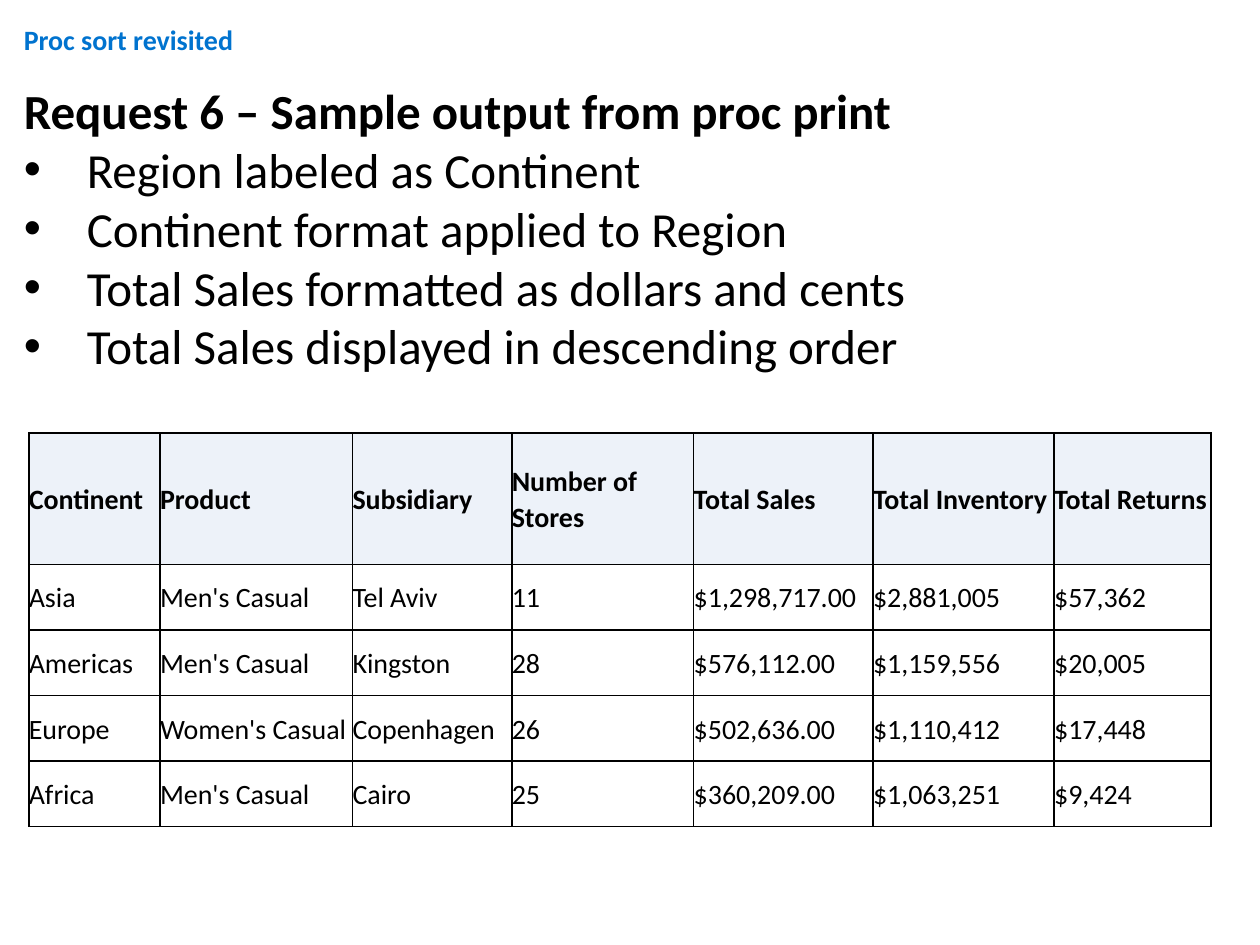
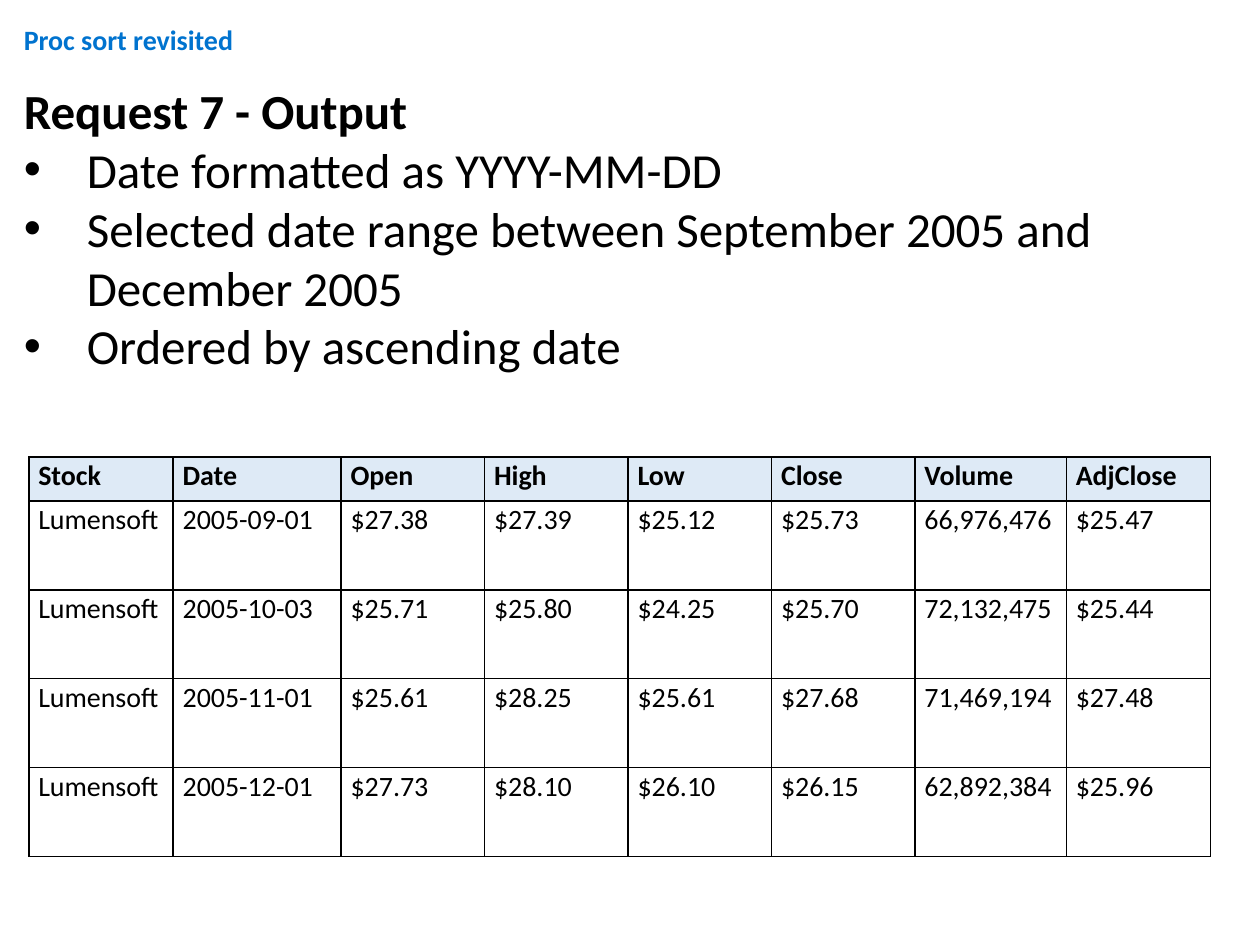
from pptx import Presentation
from pptx.dml.color import RGBColor
from pptx.enum import text as t
from pptx.oxml import parse_xml
from pptx.oxml.ns import nsdecls
from pptx.util import Pt


def rgb(code):
    return RGBColor.from_string(code)


class Deck:
    font = "Calibri"
    blue, black = "0073CF", "000000"
    left, wide = 6.5, 685

    def __init__(self):
        self.prs = Presentation()
        self.prs.slide_width, self.prs.slide_height = Pt(720), Pt(540)

    def page(self, head, points):
        """Start a slide with its section title, heading and bullets."""
        self.slide = self.prs.slides.add_slide(self.prs.slide_layouts[6])
        title = self.box(9.5, 26.5)
        self.label(title.paragraphs[0], "Proc sort revisited", 16, True, self.blue)
        body = self.box(42.5, 177)
        self.label(body.paragraphs[0], head, 28, True)
        for point in points:
            para = body.add_paragraph()
            self.label(para, point, 28)
            self.bullet(para)

    def box(self, top, high):
        shape = self.slide.shapes.add_textbox(
            Pt(self.left), Pt(top), Pt(self.wide), Pt(high))
        frame = shape.text_frame
        frame.word_wrap = True
        frame.auto_size = t.MSO_AUTO_SIZE.SHAPE_TO_FIT_TEXT
        return frame

    def label(self, para, words, size, bold=False, color=black):
        para.text = words
        font = para.font
        font.name, font.size, font.bold = self.font, Pt(size), bold
        font.color.rgb = rgb(color)

    def bullet(self, para):
        props = para._p.get_or_add_pPr()
        props.set("marL", str(Pt(36)))
        props.set("indent", str(-Pt(36)))
        marks = (f'<a:buFont {nsdecls("a")} typeface="Arial"/>',
                 f'<a:buChar {nsdecls("a")} char="•"/>')
        for place, mark in enumerate(marks):
            props.insert(place, parse_xml(mark))

    def border(self, cell):
        props = cell._tc.get_or_add_tcPr()
        for side in "LRTB":
            props.append(parse_xml(
                f'<a:ln{side} {nsdecls("a")} w="{Pt(1)}"><a:solidFill>'
                f'<a:srgbClr val="{self.black}"/></a:solidFill></a:ln{side}>'))

    def table(self, top, cols, highs, rows, tint, inset=0, after=0,
              anchor=t.MSO_ANCHOR.TOP):
        """Draw a bordered grid; highs holds the head and body row heights."""
        tall = [highs[0]] + [highs[1]] * (len(rows) - 1)
        grid = self.slide.shapes.add_table(
            len(rows), len(cols), Pt(16.5), Pt(top),
            Pt(sum(cols)), Pt(sum(tall))).table
        grid.first_row = grid.horz_banding = False
        for col, width in zip(grid.columns, cols):
            col.width = Pt(width)
        for i, (row, values) in enumerate(zip(grid.rows, rows)):
            row.height = Pt(tall[i])
            for cell, value in zip(row.cells, values):
                cell.margin_left = cell.margin_right = Pt(inset)
                cell.margin_top = cell.margin_bottom = 0
                cell.vertical_anchor = anchor
                para = cell.text_frame.paragraphs[0]
                self.label(para, value, 16, bold=i == 0)
                para.line_spacing, para.space_after = 1.07, Pt(after)
                self.border(cell)
                if i == 0:
                    cell.fill.solid()
                    cell.fill.fore_color.rgb = rgb(tint)
                else:
                    cell.fill.background()


def main():
    deck = Deck()

    # Sales by continent
    deck.page("Request 6 – Sample output from proc print", [
        "Region labeled as Continent",
        "Continent format applied to Region",
        "Total Sales formatted as dollars and cents",
        "Total Sales displayed in descending order"])
    sales = [
        ("Continent", "Product", "Subsidiary", "Number of Stores",
         "Total Sales", "Total Inventory", "Total Returns"),
        ("Asia", "Men's Casual", "Tel Aviv", "11",
         "$1,298,717.00", "$2,881,005", "$57,362"),
        ("Americas", "Men's Casual", "Kingston", "28",
         "$576,112.00", "$1,159,556", "$20,005"),
        ("Europe", "Women's Casual", "Copenhagen", "26",
         "$502,636.00", "$1,110,412", "$17,448"),
        ("Africa", "Men's Casual", "Cairo", "25",
         "$360,209.00", "$1,063,251", "$9,424")]
    deck.table(247.5, [75, 110, 91, 104, 102.5, 103.5, 89.5], (75, 37.5),
               sales, "EDF2F9", after=8, anchor=t.MSO_ANCHOR.MIDDLE)

    # Stock prices by month
    deck.page("Request 7 - Output", [
        "Date formatted as YYYY-MM-DD",
        "Selected date range between September 2005 and December 2005",
        "Ordered by ascending date"])
    stock = "Lumensoft"
    prices = [
        ("Stock", "Date", "Open", "High", "Low", "Close", "Volume", "AdjClose"),
        (stock, "2005-09-01", "$27.38", "$27.39", "$25.12", "$25.73",
         "66,976,476", "$25.47"),
        (stock, "2005-10-03", "$25.71", "$25.80", "$24.25", "$25.70",
         "72,132,475", "$25.44"),
        (stock, "2005-11-01", "$25.61", "$28.25", "$25.61", "$27.68",
         "71,469,194", "$27.48"),
        (stock, "2005-12-01", "$27.73", "$28.10", "$26.10", "$26.15",
         "62,892,384", "$25.96")]
    deck.table(261, [82.5, 96, 82, 82, 82, 82, 86.5, 82.5], (25.2, 50.8),
               prices, "DEEAF6", inset=5.4)

    deck.prs.save("out.pptx")


if __name__ == "__main__":
    main()
